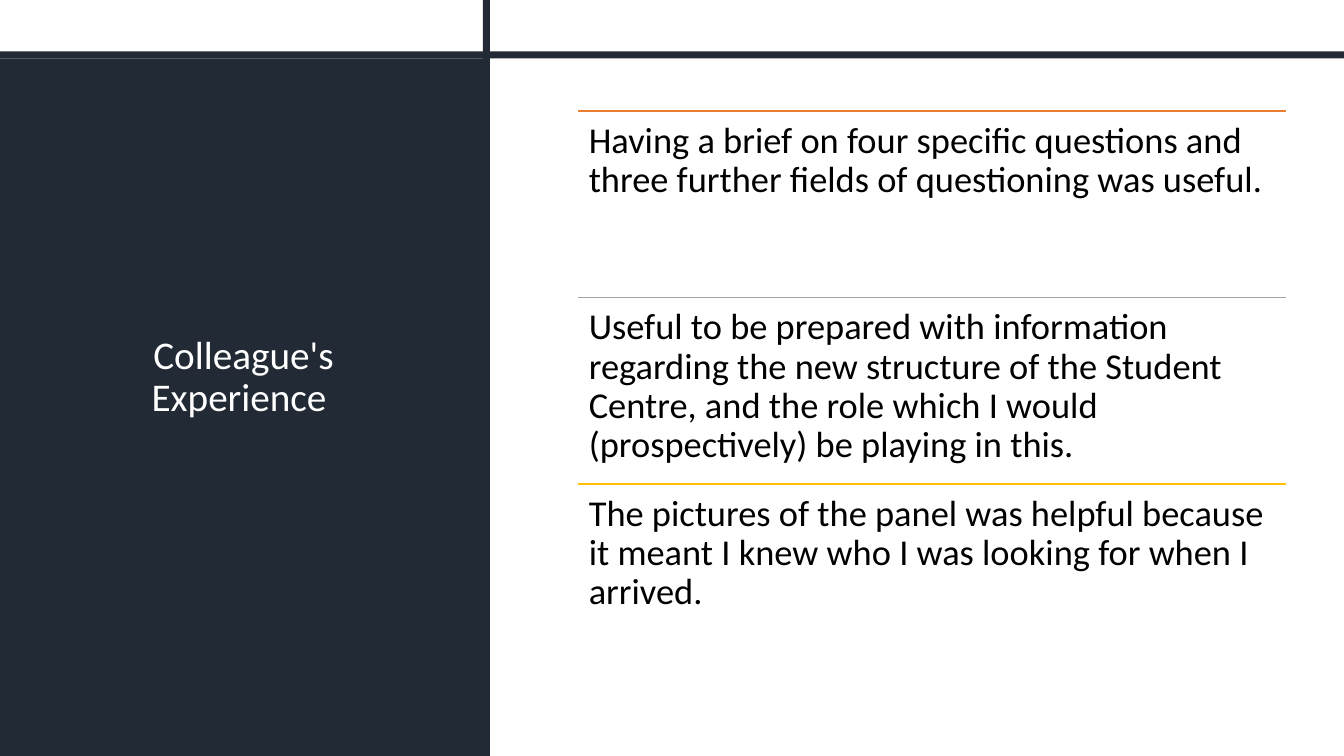
from lxml.etree import SubElement as Sub
from pptx import Presentation as Deck
from pptx.dml.color import RGBColor as Rgb
from pptx.enum.shapes import MSO_CONNECTOR as Link, MSO_SHAPE as Kind
from pptx.enum.text import MSO_ANCHOR as Anchor, PP_ALIGN as Align
from pptx.oxml.ns import qn
from pptx.util import Inches, Pt

WIDE, HIGH = 13.33, 7.5
HUES = {
    "navy": "222A35", "white": "FFFFFF", "black": "000000",
    "orange": "ED7D31", "grey": "A5A5A5", "gold": "FFC000",
}
FONT = "Calibri"

# Frame: a side panel and two crossing bars
SIDE, BAR, TOP = 4.86, 0.07, 0.51
# List: one column of equal rows
LEFT, HEAD, SPAN, ROW = 5.73, 1.1, 7.02, 1.85

TITLE = "Colleague's Experience "
NOTES = [
    ("orange", "Having a brief on four specific questions and three further "
               "fields of questioning was useful. "),
    ("grey", "Useful to be prepared with information regarding the new "
             "structure of the Student Centre, and the role which I would "
             "(prospectively) be playing in this."),
    ("gold", "The pictures of the panel was helpful because it meant I knew "
             "who I was looking for when I arrived. "),
]


def hue(name):
    return Rgb.from_string(HUES[name])


def block(slide, x, y, w, h):
    """Add a plain navy rectangle."""
    shape = slide.shapes.add_shape(Kind.RECTANGLE, *map(Inches, (x, y, w, h)))
    shape.shadow.inherit = False
    shape.fill.solid()
    shape.fill.fore_color.rgb = hue("navy")
    shape.line.fill.background()


def rule(slide, x, y, w, name):
    """Add a thin horizontal line without a shadow."""
    line = slide.shapes.add_connector(
        Link.STRAIGHT, *map(Inches, (x, y, x + w, y)))
    line.line.color.rgb = hue(name)
    line.line.width = Pt(1)
    Sub(line._element.spPr, qn("a:effectLst"))


def words(slide, x, y, w, h, text, size, name, align=Align.LEFT,
          anchor=Anchor.TOP, pad=(0.11, 0.11)):
    """Add a wrapped text box with one paragraph."""
    box = slide.shapes.add_textbox(*map(Inches, (x, y, w, h)))
    frame = box.text_frame
    frame.word_wrap = True
    frame.vertical_anchor = anchor
    frame.margin_left = frame.margin_right = Inches(pad[0])
    frame.margin_top = frame.margin_bottom = Inches(pad[1])
    para = frame.paragraphs[0]
    para.alignment = align
    para.line_spacing = 0.9
    run = para.add_run()
    run.text = text
    run.font.name = FONT
    run.font.size = Pt(size)
    run.font.color.rgb = hue(name)


def main():
    deck = Deck()
    deck.slide_width, deck.slide_height = Inches(WIDE), Inches(HIGH)
    slide = deck.slides.add_slide(deck.slide_layouts[6])

    # Side panel with the title
    block(slide, 0, TOP + BAR, SIDE, HIGH - TOP - BAR)
    words(slide, 0.66, 0.84, 3.51, 5.82, TITLE, 28, "white",
          Align.CENTER, Anchor.MIDDLE, (0.1, 0.05))

    # Crossing bars
    block(slide, SIDE - BAR, 0, BAR, HIGH)
    block(slide, 0, TOP, WIDE, BAR)

    # Ruled list
    for i, (name, text) in enumerate(NOTES):
        y = HEAD + i * ROW
        rule(slide, LEFT, y, SPAN, name)
        words(slide, LEFT, y, SPAN, ROW, text, 26, "black")

    deck.save("out.pptx")


if __name__ == "__main__":
    main()
